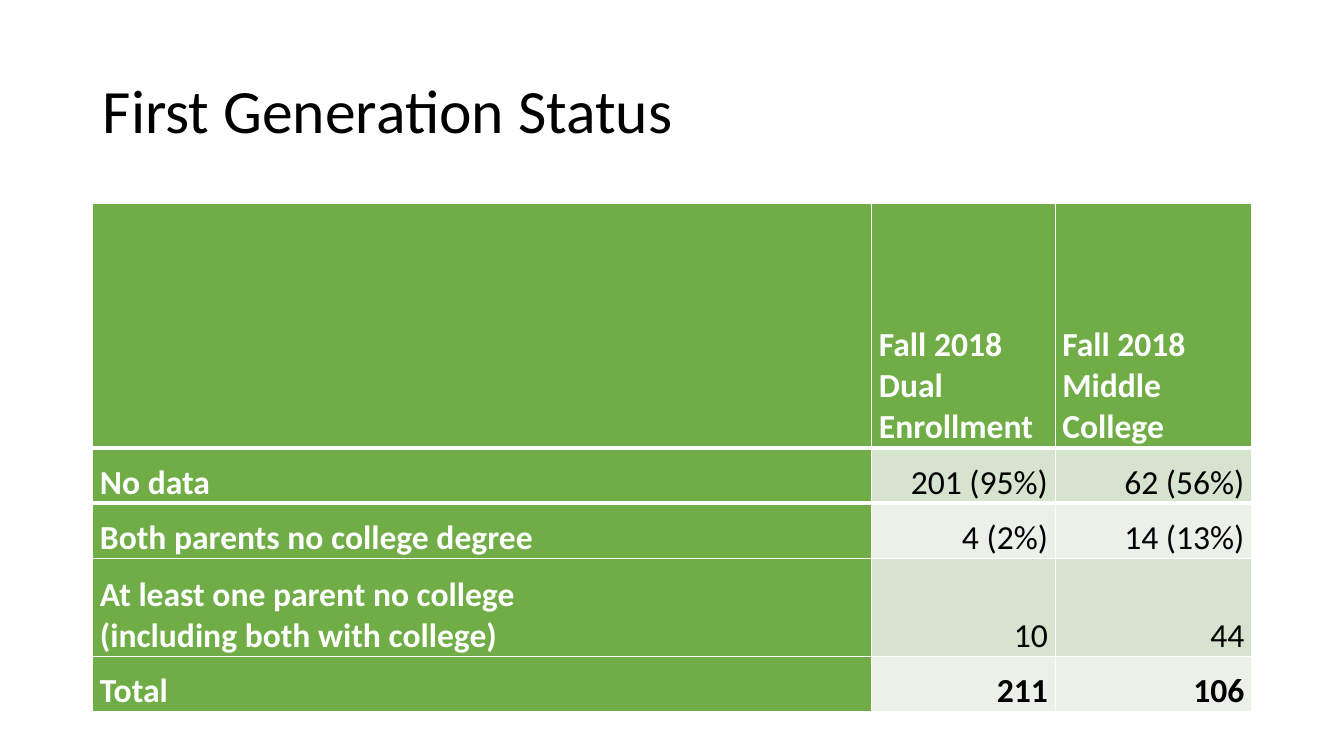
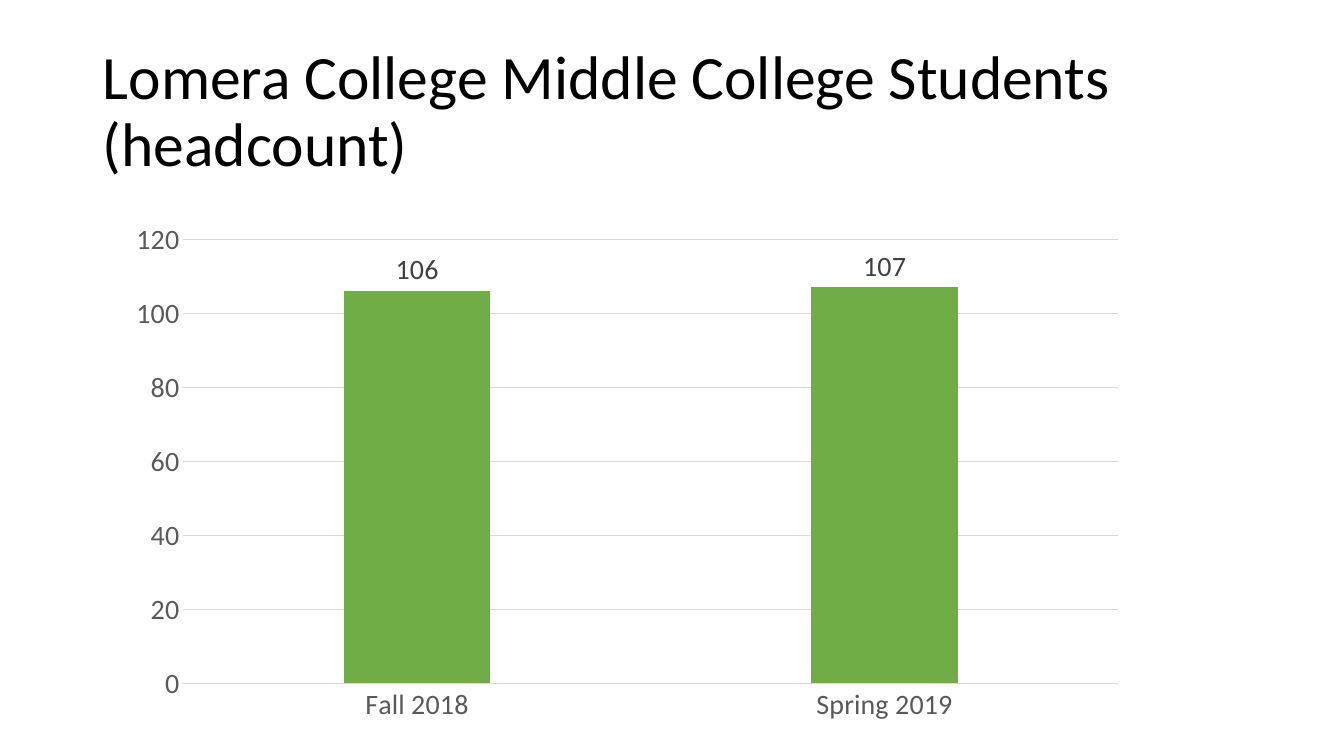
from lxml import etree
from pptx import Presentation
from pptx.chart.data import CategoryChartData
from pptx.dml.color import RGBColor
from pptx.enum.chart import XL_CHART_TYPE, XL_LABEL_POSITION, XL_TICK_MARK
from pptx.enum.text import MSO_ANCHOR, PP_ALIGN
from pptx.oxml.ns import qn
from pptx.util import Cm, Pt

FONT = "Calibri"
BLACK = RGBColor(0x00, 0x00, 0x00)
WHITE = RGBColor(0xFF, 0xFF, 0xFF)
GREEN = RGBColor(0x70, 0xAD, 0x47)
BANDS = [RGBColor(0xD5, 0xE3, 0xCF), RGBColor(0xEB, 0xF1, 0xE9)]
AXIS_GRAY = RGBColor(0x59, 0x59, 0x59)
LABEL_GRAY = RGBColor(0x40, 0x40, 0x40)
GRID_GRAY = RGBColor(0xD9, 0xD9, 0xD9)

MIDDLE, BOTTOM = MSO_ANCHOR.MIDDLE, MSO_ANCHOR.BOTTOM
LEFT, RIGHT = PP_ALIGN.LEFT, PP_ALIGN.RIGHT
COLUMNS = XL_CHART_TYPE.COLUMN_CLUSTERED
OUTSIDE_END = XL_LABEL_POSITION.OUTSIDE_END
NO_TICK = XL_TICK_MARK.NONE

MARGIN, CONTENT_W = Cm(2.34), Cm(29.21)


def set_font(font, size, color, bold=False):
    font.name = FONT
    font.size = Pt(size)
    font.bold = bold
    font.color.rgb = color


def add_titled_slide(title):
    slide = prs.slides.add_slide(prs.slide_layouts[6])
    tf = slide.shapes.add_textbox(MARGIN, Cm(1.01), CONTENT_W, Cm(3.68)).text_frame
    tf.word_wrap = True
    tf.vertical_anchor = MIDDLE
    p = tf.paragraphs[0]
    p.line_spacing = 0.9
    r = p.add_run()
    r.text = title
    set_font(r.font, 44, BLACK)
    return slide


prs = Presentation()
prs.slide_width, prs.slide_height = Cm(33.87), Cm(19.05)

# First generation table
slide = add_titled_slide("First Generation Status")
rows = [
    ["", "Fall 2018 Dual Enrollment", "Fall 2018 Middle College"],
    ["No data", "201 (95%)", "62 (56%)"],
    ["Both parents no college degree", "4 (2%)", "14 (13%)"],
    ["At least one parent no college\n(including both with college)", "10", "44"],
    ["Total", "211", "106"],
]
col_widths = [19.63, 4.62, 4.95]
row_heights = [6.15, 1.4, 1.4, 2.46, 1.4]

table = slide.shapes.add_table(len(rows), len(col_widths), MARGIN, Cm(5.13),
                               CONTENT_W, Cm(sum(row_heights))).table
table.first_col = True
for column, width in zip(table.columns, col_widths):
    column.width = Cm(width)
for row, height in zip(table.rows, row_heights):
    row.height = Cm(height)

for i, row in enumerate(rows):
    for j, text in enumerate(row):
        heading = i == 0 or j == 0
        cell = table.cell(i, j)
        cell.fill.solid()
        cell.fill.fore_color.rgb = GREEN if heading else BANDS[(i - 1) % 2]
        cell.vertical_anchor = BOTTOM
        cell.margin_left = cell.margin_right = Cm(0.18)
        cell.margin_top = cell.margin_bottom = 0
        if i < 2:  # thick rule between the header and the first row
            ln = etree.Element(qn("a:lnT" if i else "a:lnB"), w=str(Pt(3)))
            solid = etree.SubElement(ln, qn("a:solidFill"))
            etree.SubElement(solid, qn("a:srgbClr"), val=str(WHITE))
            cell._tc.get_or_add_tcPr().insert(0, ln)
        if not text:
            continue
        tf = cell.text_frame
        for n, line in enumerate(text.split("\n")):
            p = tf.add_paragraph() if n else tf.paragraphs[0]
            p.alignment = LEFT if heading else RIGHT
            r = p.add_run()
            r.text = line
            set_font(r.font, 24, WHITE if heading else BLACK,
                     bold=heading or row[0] == "Total")

# Headcount chart
slide = add_titled_slide("Lomera College Middle College Students (headcount)")
data = CategoryChartData()
data.categories = ["Fall 2018", "Spring 2019"]
data.add_series("Series 1", [106, 107])
chart = slide.shapes.add_chart(COLUMNS, Cm(2.92), Cm(5.33),
                               Cm(25.78), Cm(13.13), data).chart
chart.has_title = False
chart.has_legend = False
set_font(chart.font, 20, BLACK)

for axis in (chart.category_axis, chart.value_axis):
    axis.major_tick_mark = axis.minor_tick_mark = NO_TICK
    set_font(axis.tick_labels.font, 20, AXIS_GRAY)

value_axis = chart.value_axis
value_axis.minimum_scale, value_axis.maximum_scale = 0, 120
value_axis.major_unit = 20
value_axis.format.line.fill.background()
for line in (chart.category_axis.format.line, value_axis.major_gridlines.format.line):
    line.color.rgb = GRID_GRAY
    line.width = Pt(0.75)

plot = chart.plots[0]
plot.vary_by_categories = False
plot.gap_width, plot.overlap = 219, -27
fill = plot.series[0].format.fill
fill.solid()
fill.fore_color.rgb = GREEN
plot.has_data_labels = True
labels = plot.data_labels
labels.show_value = True
labels.position = OUTSIDE_END
set_font(labels.font, 20, LABEL_GRAY)

prs.save("out.pptx")
